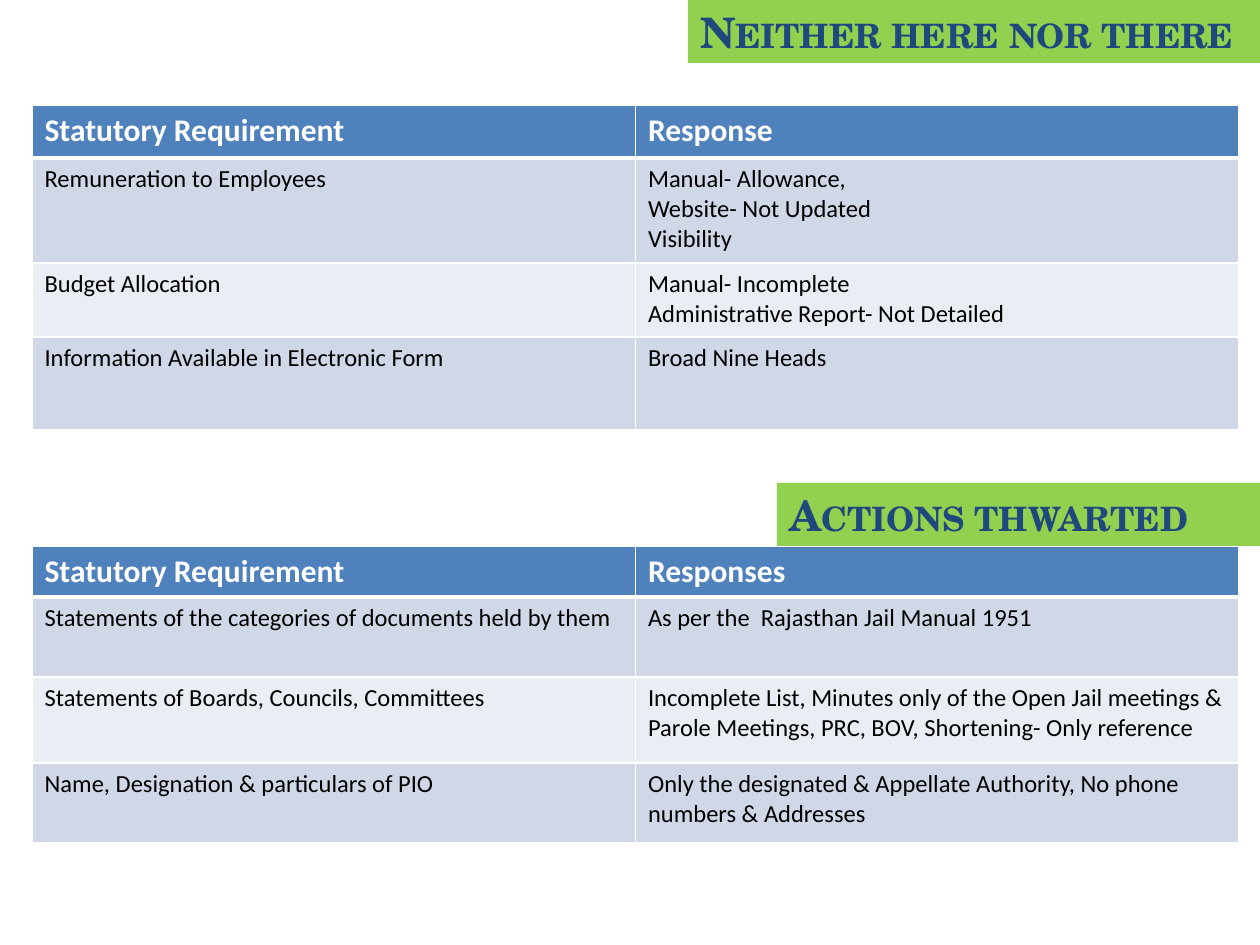
from lxml.etree import SubElement
from pptx import Presentation
from pptx.dml.color import RGBColor
from pptx.enum.text import MSO_AUTO_SIZE
from pptx.oxml.ns import qn
from pptx.util import Emu, Pt

PAGE_WIDTH, PAGE_HEIGHT = 1260, 945
TABLE_LEFT, TABLE_WIDTH = 32, 1207
BANNER_HEIGHT = 63
HEADER_FILL, ODD_FILL, EVEN_FILL = "4F81BD", "D0D8E8", "E9EDF4"

SECTIONS = [
    {
        "title": "Neither here nor there", "banner": (688, 0),
        "table_top": 105, "heights": [53, 105, 74, 93],
        "rows": [
            ("Statutory Requirement", "Response"),
            ("Remuneration to Employees",
             "Manual- Allowance,\nWebsite- Not Updated\nVisibility"),
            ("Budget Allocation",
             "Manual- Incomplete\nAdministrative Report- Not Detailed"),
            ("Information Available in Electronic Form", "Broad Nine Heads"),
        ],
    },
    {
        "title": "Actions thwarted", "banner": (777, 483),
        "table_top": 546, "heights": [51, 80, 86, 80],
        "rows": [
            ("Statutory Requirement", "Responses"),
            ("Statements of the categories of documents held by them",
             "As per the  Rajasthan Jail Manual 1951"),
            ("Statements of Boards, Councils, Committees",
             "Incomplete List, Minutes only of the Open Jail meetings & "
             "Parole Meetings, PRC, BOV, Shortening- Only reference"),
            ("Name, Designation & particulars of PIO",
             "Only the designated & Appellate Authority, No phone numbers & Addresses"),
        ],
    },
]


def px(length):
    return Emu(round(length * 914400 / 126))


def color(hex_string):
    return RGBColor.from_string(hex_string)


def fill_solid(item, hex_string):
    item.fill.solid()
    item.fill.fore_color.rgb = color(hex_string)


def format_text(text_frame, font_name, size, hex_string, bold):
    for para in text_frame.paragraphs:
        for span in para.runs:
            span.font.name = font_name
            span.font.size = Pt(size)
            span.font.bold = bold
            span.font.color.rgb = color(hex_string)


def set_borders(cell, bottom_width):
    """Draw white borders; call before the fill, which must follow them."""
    properties = cell._tc.get_or_add_tcPr()
    for side, width in (("L", 1), ("R", 1), ("T", 1), ("B", bottom_width)):
        line = SubElement(properties, qn(f"a:ln{side}"), w=str(Pt(width)))
        SubElement(SubElement(line, qn("a:solidFill")), qn("a:srgbClr"), val="FFFFFF")


def add_banner(page, left, top, title):
    box = page.shapes.add_textbox(px(left), px(top), px(PAGE_WIDTH - left), px(BANNER_HEIGHT))
    fill_solid(box, "92D050")
    text_frame = box.text_frame
    text_frame.word_wrap = True
    text_frame.auto_size = MSO_AUTO_SIZE.SHAPE_TO_FIT_TEXT
    text_frame.text = title
    format_text(text_frame, "TeX Gyre Schola", 24, "1F497D", True)
    text_frame.paragraphs[0].runs[0].font._element.set("cap", "small")


def add_requirements_table(page, left, top, width, heights, rows):
    frame = page.shapes.add_table(len(rows), 2, px(left), px(top), px(width), px(sum(heights)))
    table = frame.table
    for row, height in zip(table.rows, heights):
        row.height = px(height)
    for row_index, texts in enumerate(rows):
        is_header = row_index == 0
        body_fill = ODD_FILL if row_index % 2 else EVEN_FILL
        for column_index, text in enumerate(texts):
            cell = table.cell(row_index, column_index)
            set_borders(cell, 3 if is_header else 1)
            fill_solid(cell, HEADER_FILL if is_header else body_fill)
            cell.text_frame.text = text
            if is_header:
                format_text(cell.text_frame, "Calibri", 18, "FFFFFF", True)
            else:
                format_text(cell.text_frame, "Calibri", 14, "000000", False)


def main():
    deck = Presentation()
    deck.slide_width, deck.slide_height = px(PAGE_WIDTH), px(PAGE_HEIGHT)
    page = deck.slides.add_slide(deck.slide_layouts[6])
    for section in SECTIONS:
        add_requirements_table(page, TABLE_LEFT, section["table_top"], TABLE_WIDTH,
                               section["heights"], section["rows"])
        add_banner(page, *section["banner"], section["title"])
    deck.save("out.pptx")


if __name__ == "__main__":
    main()
